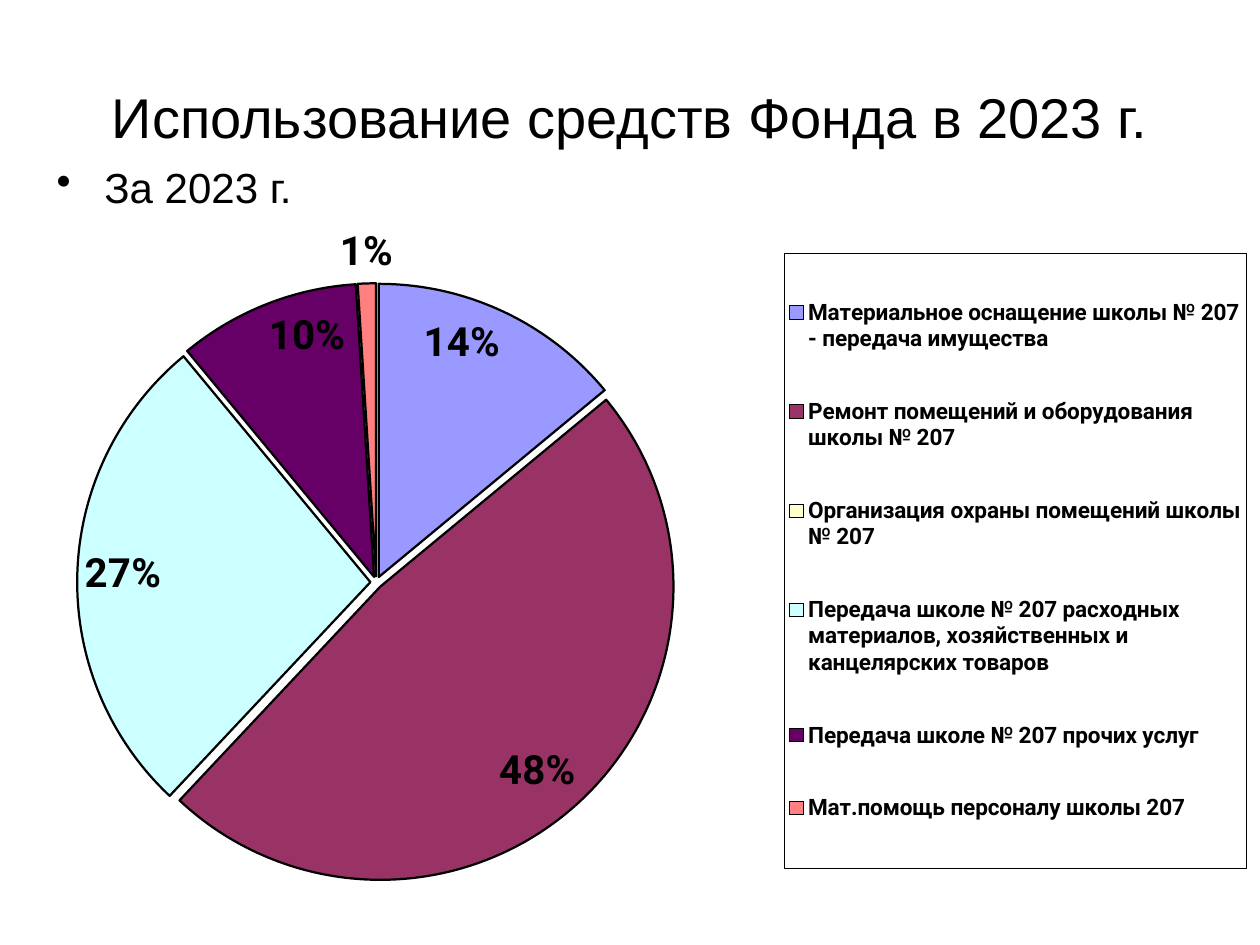
import pptx
import pptx.chart.data
import pptx.dml.color
import pptx.enum.chart
import pptx.enum.text
import pptx.oxml
import pptx.oxml.ns
import pptx.util
from pptx.util import Inches

RGBColor = pptx.dml.color.RGBColor
BLACK = RGBColor(0x00, 0x00, 0x00)
PERIWINKLE = RGBColor(0x99, 0x99, 0xFF)
PLUM = RGBColor(0x99, 0x33, 0x66)
CREAM = RGBColor(0xFF, 0xFF, 0xCC)
ICE = RGBColor(0xCC, 0xFF, 0xFF)
PURPLE = RGBColor(0x66, 0x00, 0x66)
CORAL = RGBColor(0xFF, 0x80, 0x80)

SPENDING = [
    ("Материальное оснащение школы № 207 - передача имущества", 14, PERIWINKLE),
    ("Ремонт помещений и оборудования школы № 207", 48, PLUM),
    ("Организация охраны помещений школы № 207", 0, CREAM),
    ("Передача школе № 207 расходных материалов, хозяйственных и "
     "канцелярских товаров", 27, ICE),
    ("Передача школе № 207 прочих услуг", 10, PURPLE),
    ("Мат.помощь персоналу школы 207", 1, CORAL),
]


def chart_xml(body):
    return pptx.oxml.parse_xml(body.replace(">", f" {pptx.oxml.ns.nsdecls('c', 'a')}>", 1))


def manual_layout(x, y, w, h, inner=False):
    """Layout element in fractions of the chart area."""
    target = '<c:layoutTarget val="inner"/>' if inner else ""
    return chart_xml(
        f'<c:layout><c:manualLayout>{target}<c:xMode val="edge"/><c:yMode val="edge"/>'
        f'<c:x val="{x}"/><c:y val="{y}"/><c:w val="{w}"/><c:h val="{h}"/>'
        '</c:manualLayout></c:layout>')


def set_layout(parent, layout, after=None):
    for old in parent.findall(pptx.oxml.ns.qn("c:layout")):
        parent.remove(old)
    if after is None:
        parent.insert(0, layout)
    else:
        after.addnext(layout)


class Deck:
    def __init__(self, slide, text_font="Arial", chart_font="Roboto"):
        self.s = slide
        self.text_font = text_font
        self.chart_font = chart_font

    def style(self, font, name, size, bold=False):
        font.name = name
        font.size = pptx.util.Pt(size)
        font.bold = bold
        font.color.rgb = BLACK

    def text(self, box, text, size, align, anchor):
        sp = self.s.shapes.add_textbox(*map(Inches, box))
        tf = sp.text_frame
        tf.word_wrap = True
        tf.vertical_anchor = anchor
        tf.text = text
        p = tf.paragraphs[0]
        p.alignment = align
        self.style(p.runs[0].font, self.text_font, size)
        return p

    def bullet(self, box, text, size):
        p = self.text(box, text, size, pptx.enum.text.PP_ALIGN.LEFT,
                      pptx.enum.text.MSO_ANCHOR.TOP)
        p.space_before = pptx.util.Pt(size * 0.2)
        pPr = p._p.get_or_add_pPr()
        pPr.set("marL", str(Inches(0.38)))
        pPr.set("indent", str(-Inches(0.38)))
        pPr.append(chart_xml('<a:buChar char="•"></a:buChar>'))

    def pie(self, box, rows):
        data = pptx.chart.data.CategoryChartData()
        data.categories = [name for name, _, _ in rows]
        data.add_series("Series 1", [value for _, value, _ in rows])
        chart = self.s.shapes.add_chart(
            pptx.enum.chart.XL_CHART_TYPE.PIE, *map(Inches, box), data).chart
        chart.has_title = False
        self.style(chart.font, self.chart_font, 23, bold=True)
        plot = chart.plots[0]
        plot.vary_by_categories = True
        self.slices(plot.series[0], rows)
        self.labels(plot.series[0], rows)
        self.legend(chart)
        set_layout(plot._element.getparent(),
                   manual_layout(0.13, 0.1, 0.44, 0.82, inner=True))

    def slices(self, series, rows):
        series.format.line.color.rgb = BLACK
        series._element.spPr.addnext(chart_xml('<c:explosion val="2"></c:explosion>'))
        for i, (_, _, color) in enumerate(rows):
            fmt = series.points[i].format
            fmt.fill.solid()
            fmt.fill.fore_color.rgb = color
            fmt.line.color.rgb = BLACK
            fmt.line.width = pptx.util.Pt(1.28)

    def labels(self, series, rows):
        """Percentages inside the slices; thin slice outside, empty one unlabelled."""
        labels = series.data_labels
        labels.show_percentage = True
        labels.show_value = False
        labels.number_format = "0%"
        labels.number_format_is_linked = False
        labels.position = pptx.enum.chart.XL_LABEL_POSITION.INSIDE_END
        self.style(labels.font, self.chart_font, 23, bold=True)
        special = []
        for i, (_, value, _) in enumerate(rows):
            if value == 0:
                special.append(f'<c:dLbl><c:idx val="{i}"/><c:delete val="1"/></c:dLbl>')
            elif value < 5:
                special.append(
                    f'<c:dLbl><c:idx val="{i}"/><c:numFmt formatCode="0%" sourceLinked="0"/>'
                    '<c:dLblPos val="outEnd"/><c:showLegendKey val="0"/><c:showVal val="0"/>'
                    '<c:showCatName val="0"/><c:showSerName val="0"/>'
                    '<c:showPercent val="1"/><c:showBubbleSize val="0"/></c:dLbl>')
        for n, xml in enumerate(special):
            labels._element.insert(n, chart_xml(xml))

    def legend(self, chart):
        chart.has_legend = True
        legend = chart.legend
        legend.position = pptx.enum.chart.XL_LEGEND_POSITION.RIGHT
        legend.include_in_layout = False
        self.style(legend.font, self.chart_font, 12.9, bold=True)
        el = legend._element
        set_layout(el, manual_layout(0.65, 0.06, 0.34, 0.84),
                   after=el.find(pptx.oxml.ns.qn("c:legendPos")))
        el.find(pptx.oxml.ns.qn("c:txPr")).addprevious(chart_xml(
            '<c:spPr><a:noFill/><a:ln w="3175"><a:solidFill>'
            f'<a:srgbClr val="{BLACK}"/></a:solidFill></a:ln></c:spPr>'))


def main():
    prs = pptx.Presentation()
    prs.slide_width, prs.slide_height = Inches(10), Inches(7.5)
    deck = Deck(prs.slides.add_slide(prs.slide_layouts[6]))
    deck.text((0.5, 0.3, 9, 1.25), "Использование средств Фонда в 2023 г.", 32,
              pptx.enum.text.PP_ALIGN.CENTER, pptx.enum.text.MSO_ANCHOR.MIDDLE)
    deck.bullet((0.35, 1.23, 9.21, 5.91), "За 2023 г.", 24)
    deck.pie((-0.79, 1.66, 10.79, 5.81), SPENDING)
    prs.save("out.pptx")


if __name__ == "__main__":
    main()
